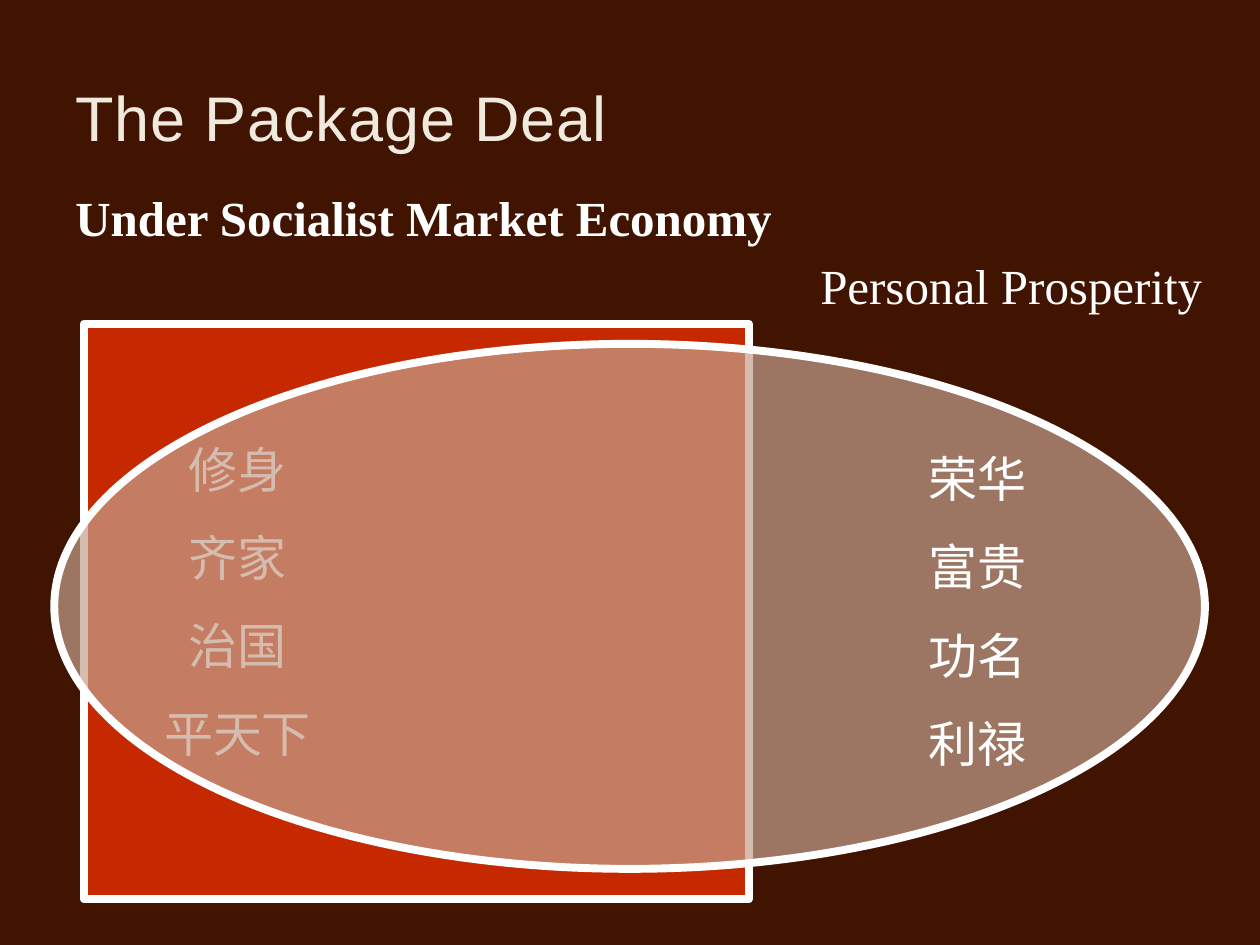
import pptx
import pptx.util
import pptx.dml.color
import pptx.enum.shapes
import pptx.enum.text
import pptx.oxml.ns
import lxml.etree

Pt = pptx.util.Pt
RGB = pptx.dml.color.RGBColor
Align = pptx.enum.text.PP_ALIGN
Shape = pptx.enum.shapes.MSO_SHAPE
qn = pptx.oxml.ns.qn

BROWN = RGB(0x41, 0x14, 0x01)
CREAM = RGB(0xF0, 0xE9, 0xDE)
WHITE = RGB(0xFF, 0xFF, 0xFF)
RED = RGB(0xFF, 0x33, 0x00)
TAN = RGB(0xC4, 0xA0, 0x8C)

# Formats: font values, then paragraph values
TITLE = {"name": "Arial", "size": Pt(36)}
SERIF = {"name": "Times New Roman", "size": Pt(28)}
HAN = {"name": "Noto Sans CJK SC", "size": Pt(28)}
LEFT = {"alignment": Align.LEFT}
RIGHT = {"alignment": Align.RIGHT}
LIST = {"alignment": Align.CENTER, "line_spacing": 1.5}

VIRTUES = ["修身", "齐家", "治国", "平天下"]
REWARDS = ["荣华", "富贵", "功名", "利禄"]


def apply(item, form):
    for key, value in form.items():
        setattr(item, key, value)


def write(frame, lines, font, para, color=WHITE):
    frame.word_wrap = True
    for i, line in enumerate(lines):
        p = frame.paragraphs[0] if i == 0 else frame.add_paragraph()
        apply(p, para)
        run = p.add_run()
        run.text = line
        apply(run.font, font)
        run.font.color.rgb = color
        # Chinese text takes its font from the East Asian slot
        face = lxml.etree.SubElement(run._r.get_or_add_rPr(), qn("a:ea"))
        face.set("typeface", font["name"])


def add_title(slide, text):
    title = slide.shapes.title
    apply(title, {"left": Pt(36), "top": Pt(21.6),
                  "width": Pt(612), "height": Pt(90)})
    frame = title.text_frame
    frame.vertical_anchor = pptx.enum.text.MSO_ANCHOR.MIDDLE
    frame.auto_size = pptx.enum.text.MSO_AUTO_SIZE.NONE
    write(frame, [text], TITLE, LEFT, CREAM)
    # Letter spacing of half a point
    frame.paragraphs[0].runs[0]._r.get_or_add_rPr().set("spc", "50")


def add_text(slide, box, lines, font, para):
    shape = slide.shapes.add_textbox(*map(Pt, box))
    write(shape.text_frame, lines, font, para)


def add_field(slide, kind, box, color):
    shape = slide.shapes.add_shape(kind, *map(Pt, box))
    shape.shadow.inherit = False
    shape.fill.solid()
    shape.fill.fore_color.rgb = color
    # Let 70% of the fill show
    tint = shape.fill._xPr.find(qn("a:solidFill"))[0]
    lxml.etree.SubElement(tint, qn("a:alpha")).set("val", "70000")
    shape.line.color.rgb = WHITE
    shape.line.width = Pt(4.5)


def main():
    deck = pptx.Presentation()
    deck.slide_width, deck.slide_height = Pt(720), Pt(540)
    slide = deck.slides.add_slide(deck.slide_layouts[5])
    slide.background.fill.solid()
    slide.background.fill.fore_color.rgb = BROWN

    # Headings
    add_title(slide, "The Package Deal")
    add_text(slide, (36, 103.5, 443, 40), ["Under Socialist Market Economy"],
             {**SERIF, "bold": True}, LEFT)
    add_text(slide, (366, 142.5, 328, 40), ["Personal Prosperity"],
             SERIF, RIGHT)

    # Overlapping fields; the ellipse veils the first list
    add_field(slide, Shape.RECTANGLE, (48, 185, 380, 329), RED)
    add_text(slide, (70.5, 230.5, 130.5, 245), VIRTUES, HAN, LIST)
    add_field(slide, Shape.OVAL, (31, 196.5, 657.5, 300), TAN)
    add_text(slide, (468, 236, 181.5, 245), REWARDS, HAN, LIST)

    deck.save("out.pptx")


if __name__ == "__main__":
    main()
